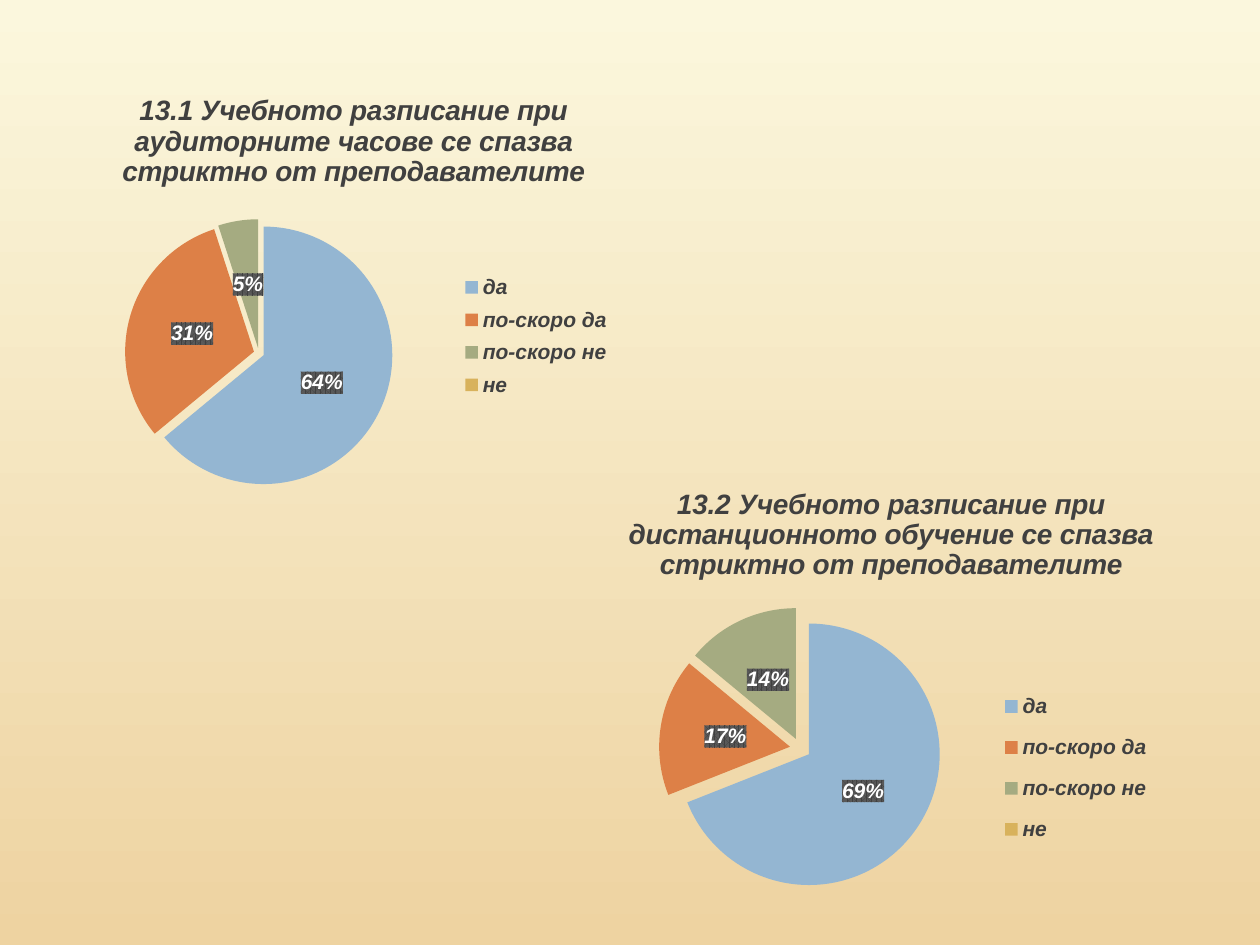
from dataclasses import dataclass
from typing import Optional

from lxml import etree
from pptx import Presentation
from pptx.chart.data import CategoryChartData
from pptx.dml.color import RGBColor
from pptx.enum.chart import XL_CHART_TYPE, XL_LABEL_POSITION, XL_LEGEND_POSITION
from pptx.oxml import parse_xml
from pptx.oxml.ns import nsdecls, qn
from pptx.util import Inches, Pt

PIE = XL_CHART_TYPE.PIE_EXPLODED
CENTER = XL_LABEL_POSITION.CENTER
RIGHT = XL_LEGEND_POSITION.RIGHT

SLIDE_WIDTH, SLIDE_HEIGHT = Inches(10), Inches(7.5)
FONT = "Arial"
COLORS = {
    "sky": "FBF7DD",
    "sand": "EED3A1",
    "text": "404040",
    "label": "FFFFFF",
    "label_dark": "404040",
    "label_light": "595959",
}
ANSWERS = {
    "да": "94B6D2",
    "по-скоро да": "DD8047",
    "по-скоро не": "A5AB81",
    "не": "D8B25C",
}


@dataclass(frozen=True)
class Area:
    """A rectangle in shares of whatever contains it."""
    left: float
    top: float
    width: Optional[float] = None
    height: Optional[float] = None


@dataclass(frozen=True)
class SurveyPie:
    question: str
    shares: tuple
    explosion: int
    frame: Area
    title: Area
    plot: Area
    legend: Area


PIES = (
    SurveyPie(
        "13.1 Учебното разписание при аудиторните часове се спазва "
        "стриктно от преподавателите",
        (64, 31, 5, None), 4,
        frame=Area(0.028, 0.07, 0.5, 0.45),
        title=Area(0.13, 0.05),
        plot=Area(0.02, 0.36, 0.67, 0.63),
        legend=Area(0.67, 0.47, 0.25, 0.33),
    ),
    SurveyPie(
        "13.2 Учебното разписание при дистанционното обучение се спазва "
        "стриктно от преподавателите",
        (69, 17, 14, None), 8,
        frame=Area(0.43, 0.5, 0.54, 0.46),
        title=Area(0.12, 0.02),
        plot=Area(0.17, 0.31, 0.42, 0.65),
        legend=Area(0.67, 0.47, 0.23, 0.42),
    ),
)


def rgb(name: str) -> RGBColor:
    return RGBColor.from_string(COLORS[name])


def style_font(font, size: float, color: str) -> None:
    font.name, font.size = FONT, Pt(size)
    font.bold = font.italic = True
    font.color.rgb = rgb(color)


def place(part, area: Area, inner: bool = False) -> None:
    """Give a chart part a manual layout inside the chart."""
    settings = [("layoutTarget", "inner")] if inner else []
    settings += [("xMode", "edge"), ("yMode", "edge"), ("x", area.left), ("y", area.top)]
    if area.width is not None:
        settings += [("w", area.width), ("h", area.height)]
    layout = part.find(qn("c:layout"))
    if layout is None:
        layout = etree.Element(qn("c:layout"))
        overlay = part.find(qn("c:overlay"))
        part.insert(0 if overlay is None else part.index(overlay), layout)
    for child in list(layout):
        layout.remove(child)
    manual = etree.SubElement(layout, qn("c:manualLayout"))
    for tag, value in settings:
        etree.SubElement(manual, qn(f"c:{tag}"), val=str(value))


def explode(series, percent: int) -> None:
    ser = series._element
    for old in ser.findall(qn("c:explosion")):
        ser.remove(old)
    explosion = etree.Element(qn("c:explosion"), val=str(percent))
    ser.find(qn("c:dPt")).addprevious(explosion)


def label_slices(plot) -> None:
    plot.has_data_labels = True
    labels = plot.series[0].data_labels
    labels.show_percentage, labels.show_value = True, False
    labels.position = CENTER
    style_font(labels.font, 12, "label")
    backdrop = parse_xml(
        f'<c:spPr {nsdecls("c", "a")}><a:pattFill prst="pct75">'
        f'<a:fgClr><a:srgbClr val="{COLORS["label_dark"]}"/></a:fgClr>'
        f'<a:bgClr><a:srgbClr val="{COLORS["label_light"]}"/></a:bgClr>'
        "</a:pattFill></c:spPr>"
    )
    labels._element.find(qn("c:txPr")).addprevious(backdrop)


def add_survey_pie(slide, pie: SurveyPie) -> None:
    data = CategoryChartData()
    data.categories = list(ANSWERS)
    data.add_series("Series 1", pie.shares)
    frame = pie.frame
    chart = slide.shapes.add_chart(
        PIE,
        int(SLIDE_WIDTH * frame.left), int(SLIDE_HEIGHT * frame.top),
        int(SLIDE_WIDTH * frame.width), int(SLIDE_HEIGHT * frame.height),
        data,
    ).chart
    chart.font.name, chart.font.size = FONT, Pt(10)

    chart.has_title = True
    title = chart.chart_title
    title.text_frame.text = pie.question
    style_font(title.text_frame.paragraphs[0].runs[0].font, 16, "text")
    place(title._element, pie.title)

    plot = chart.plots[0]
    plot.vary_by_categories = True
    series = plot.series[0]
    for index, color in enumerate(ANSWERS.values()):
        fill = series.points[index].format.fill
        fill.solid()
        fill.fore_color.rgb = RGBColor.from_string(color)
    explode(series, pie.explosion)
    label_slices(plot)
    place(chart._chartSpace.chart.plotArea, pie.plot, inner=True)

    chart.has_legend = True
    legend = chart.legend
    legend.position, legend.include_in_layout = RIGHT, False
    style_font(legend.font, 12, "text")
    place(legend._element, pie.legend)


def paint_background(slide) -> None:
    fill = slide.background.fill
    fill.gradient()
    fill.gradient_angle = 270
    for stop, color, position in zip(fill.gradient_stops, ("sky", "sand"), (0, 1)):
        stop.color.rgb = rgb(color)
        stop.position = position


def main() -> None:
    deck = Presentation()
    deck.slide_width, deck.slide_height = SLIDE_WIDTH, SLIDE_HEIGHT
    slide = deck.slides.add_slide(deck.slide_layouts[6])
    paint_background(slide)
    for pie in PIES:
        add_survey_pie(slide, pie)
    deck.save("out.pptx")


if __name__ == "__main__":
    main()
